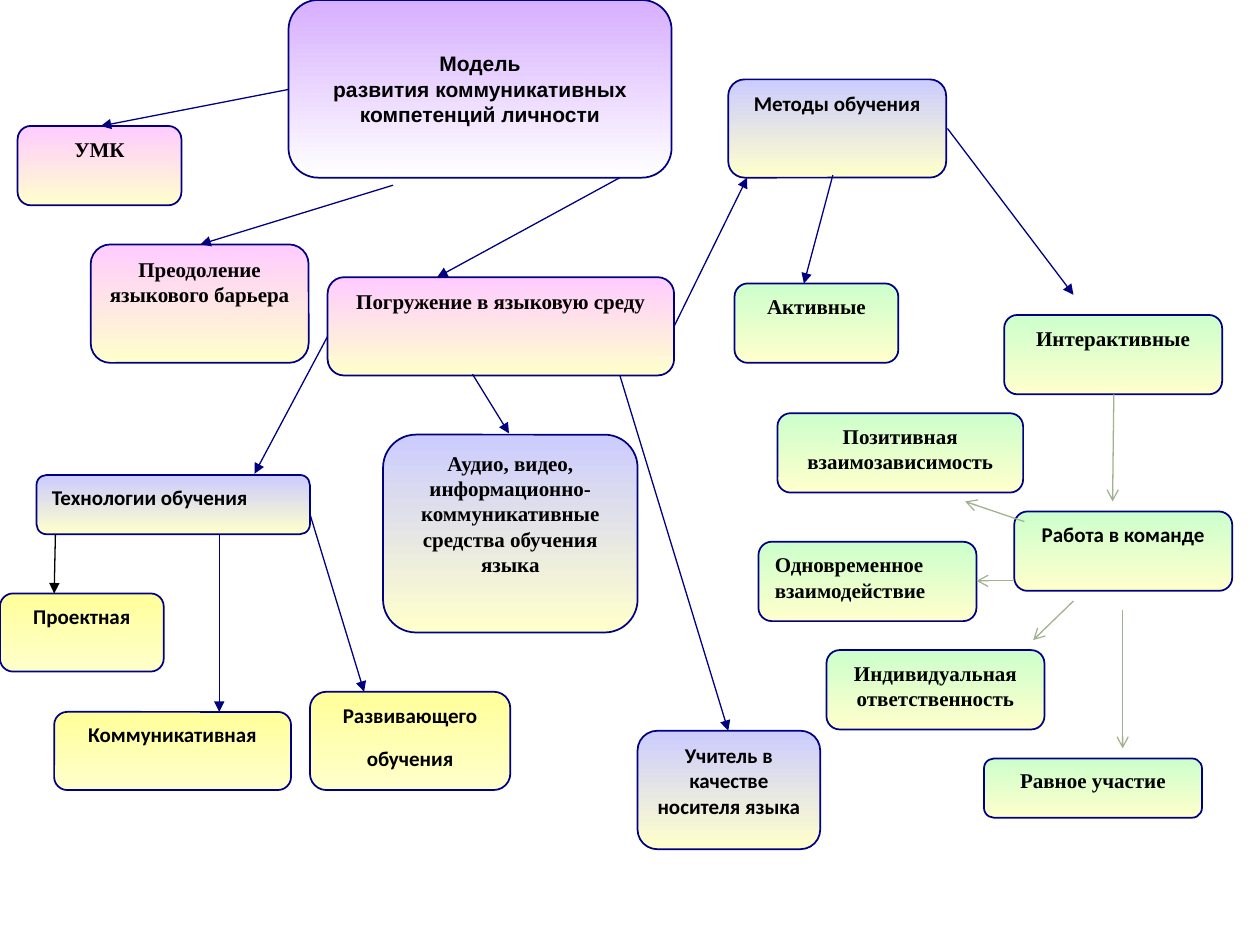
import pptx
import pptx.dml.color
import pptx.enum.shapes
import pptx.enum.text
import pptx.util
from lxml import etree

Inches = pptx.util.Inches
Pt = pptx.util.Pt
SHAPE = pptx.enum.shapes.MSO_SHAPE
ROUND, PROCESS = SHAPE.ROUNDED_RECTANGLE, SHAPE.FLOWCHART_ALTERNATE_PROCESS
ALIGN = pptx.enum.text.PP_ALIGN
ANCHOR = pptx.enum.text.MSO_ANCHOR
SERIF, SANS, TITLE = "Times New Roman", "Calibri", "Arial"

COLORS = {
    "text": "000000",
    "navy": "000080",
    "sage": "A1B28E",
    "violet": "D7AFFF",
    "pink": "FFCCFF",
    "blue": "CCCCFF",
    "yellow": "FFFF99",
    "green": "CCFFCC",
    "cream": "FFFFCC",
    "white": "FFFFFF",
}

# text, left, top, width, height, top colour, font, shape
MAIN_BOXES = [
    ("УМК", 0.14, 1, 1.3, 0.63, "pink", SERIF, PROCESS),
    ("Преодоление языкового барьера", 0.72, 1.94, 1.73, 0.94, "pink", SERIF, ROUND),
    ("Погружение в языковую среду", 2.6, 2.2, 2.75, 0.78, "pink", SERIF, ROUND),
    ("Учитель в качестве носителя языка", 5.06, 5.8, 1.45, 0.94, "blue", SANS, ROUND),
    ("Аудио, видео, информационно-коммуникативные средства обучения языка",
     3.04, 3.45, 2.02, 1.57, "blue", SERIF, ROUND),
    ("Проектная", 0, 4.71, 1.3, 0.62, "yellow", SANS, ROUND),
    ("Коммуникативная", 0.43, 5.65, 1.88, 0.62, "yellow", SANS, ROUND),
    ("Развивающего\nобучения", 2.46, 5.49, 1.59, 0.78, "yellow", SANS, ROUND),
    ("Методы обучения", 5.78, 0.63, 1.73, 0.78, "blue", SANS, ROUND),
    ("Активные", 5.83, 2.25, 1.3, 0.63, "green", SERIF, PROCESS),
    ("Интерактивные", 7.97, 2.5, 1.73, 0.63, "green", SERIF, PROCESS),
    ("Работа в команде", 8.05, 4.06, 1.73, 0.63, "green", SANS, PROCESS),
]

# text, left, top, width, height, alignment
TEAMWORK_BOXES = [
    ("Позитивная взаимозависимость", 6.17, 3.28, 1.95, 0.63, ALIGN.CENTER),
    ("Одновременное взаимодействие", 6.02, 4.3, 1.73, 0.63, ALIGN.LEFT),
    ("Индивидуальная ответственность", 6.56, 5.16, 1.73, 0.63, ALIGN.CENTER),
    ("Равное участие", 7.81, 6.02, 1.73, 0.47, ALIGN.CENTER),
]

# start x, start y, end x, end y
MODEL_ARROWS = [
    (2.29, 0.71, 0.8, 1), (3.12, 1.47, 1.59, 1.94), (4.92, 1.41, 3.47, 2.2),
    (3.75, 2.97, 4.04, 3.44), (4.92, 2.98, 5.78, 5.8), (2.6, 2.67, 2.02, 3.76),
    (1.74, 4.24, 1.74, 5.65), (2.46, 4.08, 2.89, 5.49), (5.35, 2.59, 5.93, 1.41),
    (6.61, 1.39, 6.38, 2.25), (7.52, 1.02, 8.52, 2.34),
]
TEAMWORK_ARROWS = [
    (8.84, 3.13, 8.83, 3.98), (8.91, 4.84, 8.91, 5.94), (8.13, 4.14, 7.66, 3.98),
    (8.52, 4.77, 8.2, 5.08), (8.05, 4.61, 7.75, 4.61),
]


def rgb(name):
    return pptx.dml.color.RGBColor.from_string(COLORS[name])


class Diagram:
    def __init__(self, slide):
        self.slide = slide
        self.font_size = Pt(12)
        self.outline_width = Pt(1)
        self.arrow_width = Pt(0.75)

    def box(self, text, left, top, width, height, color, font, shape=PROCESS,
            bottom="cream", align=ALIGN.CENTER, anchor=ANCHOR.TOP, space_after=10):
        sp = self.slide.shapes.add_shape(
            shape, Inches(left), Inches(top), Inches(width), Inches(height))
        sp.shadow.inherit = False
        sp.fill.gradient()
        sp.fill.gradient_angle = 270
        for stop, name, position in zip(sp.fill.gradient_stops, (color, bottom), (0, 1)):
            stop.color.rgb = rgb(name)
            stop.position = position
        sp.line.color.rgb = rgb("navy")
        sp.line.width = self.outline_width
        tf = sp.text_frame
        tf.word_wrap = True
        tf.vertical_anchor = anchor
        tf.text = text
        for p in tf.paragraphs:
            p.alignment = align
            p.space_after = Pt(space_after)
            for r in p.runs:
                r.font.name = font
                r.font.size = self.font_size
                r.font.bold = True
                r.font.color.rgb = rgb("text")

    def arrow(self, x1, y1, x2, y2, color="navy", head="triangle"):
        line = self.slide.shapes.add_connector(
            pptx.enum.shapes.MSO_CONNECTOR.STRAIGHT,
            Inches(x1), Inches(y1), Inches(x2), Inches(y2))
        line.line.color.rgb = rgb(color)
        line.line.width = self.arrow_width
        ln = line.line._get_or_add_ln()
        etree.SubElement(ln, pptx.oxml.ns.qn("a:tailEnd"), type=head)
        etree.SubElement(line._element.spPr, pptx.oxml.ns.qn("a:effectLst"))


def main():
    prs = pptx.Presentation()
    prs.slide_width, prs.slide_height = Inches(10), Inches(7.5)
    diagram = Diagram(prs.slides.add_slide(prs.slide_layouts[6]))

    diagram.box("Модель\nразвития коммуникативных компетенций личности",
                2.29, 0, 3.04, 1.41, "violet", TITLE, bottom="white",
                anchor=ANCHOR.MIDDLE, space_after=0)
    for box in MAIN_BOXES:
        diagram.box(*box)
    diagram.box("Технологии обучения", 0.29, 3.77, 2.17, 0.47, "blue", SANS, ROUND,
                align=ALIGN.LEFT)
    for *box, align in TEAMWORK_BOXES:
        diagram.box(*box, "green", SERIF, align=align, space_after=0)

    for points in MODEL_ARROWS:
        diagram.arrow(*points)
    diagram.arrow(0.44, 4.24, 0.43, 4.71, color="text")
    for points in TEAMWORK_ARROWS:
        diagram.arrow(*points, color="sage", head="arrow")

    prs.save("out.pptx")


if __name__ == "__main__":
    main()
